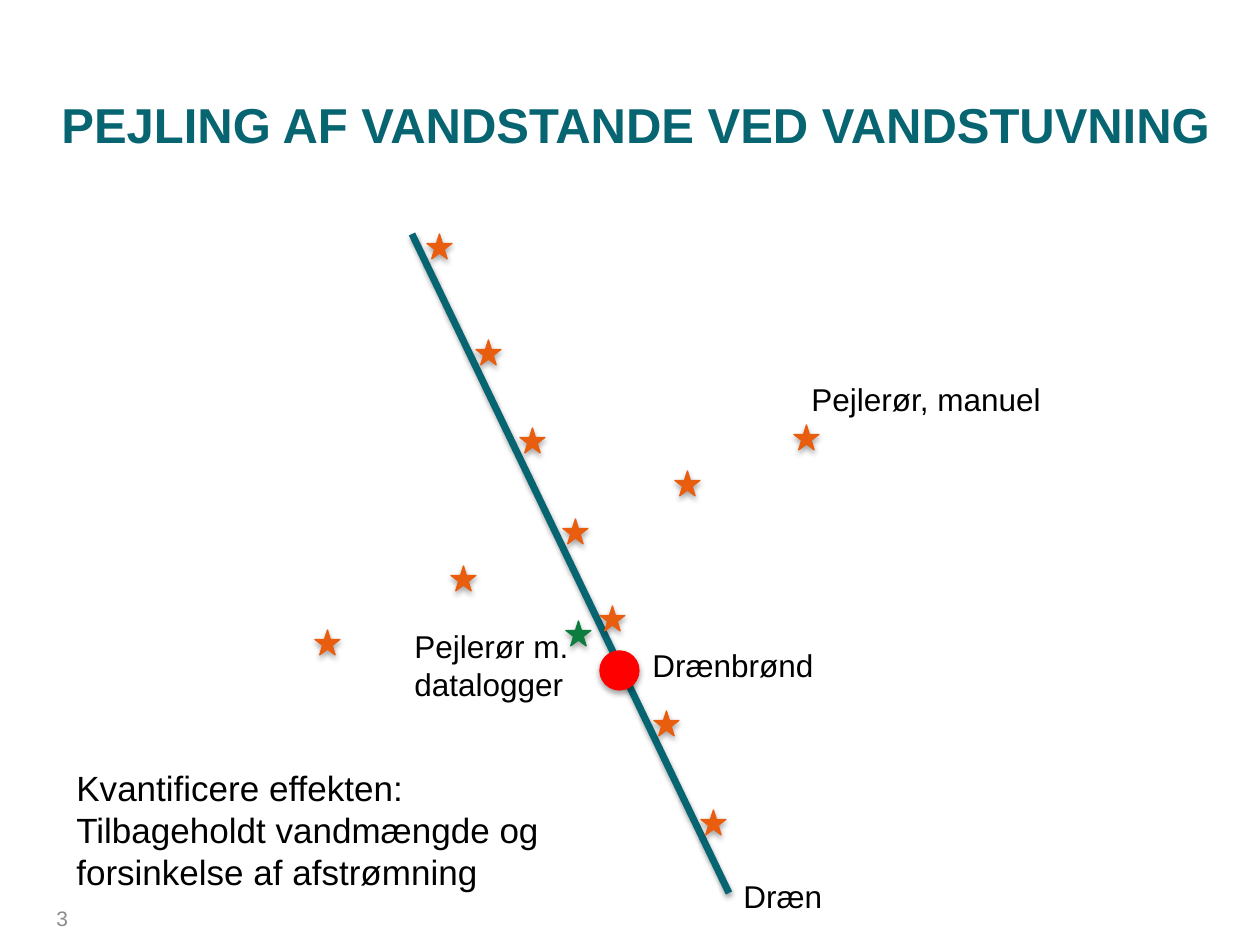
from lxml.etree import SubElement
from pptx import Presentation
from pptx.dml.color import RGBColor
from pptx.enum.shapes import MSO_CONNECTOR, MSO_SHAPE
from pptx.enum.text import MSO_ANCHOR, MSO_AUTO_SIZE, PP_ALIGN
from pptx.oxml.ns import qn
from pptx.util import Emu, Pt

TEAL = RGBColor(0x07, 0x64, 0x71)
ORANGE = RGBColor(0xE9, 0x5D, 0x0F)
GREEN = RGBColor(0x0D, 0x7C, 0x3F)
RED = RGBColor(0xFF, 0x00, 0x00)
BLACK = RGBColor(0x00, 0x00, 0x00)
GREY = RGBColor(0x8C, 0x8C, 0x8C)

TITLE = "PEJLING AF VANDSTANDE VED VANDSTUVNING"
DRAIN = (412, 234, 729, 893)
WELL = (600, 651, 39)
STAR_SIZE = 25
MANUAL_PIPES = [
    (476, 340), (427, 234), (520, 428), (600, 606), (563, 519), (315, 630),
    (451, 566), (675, 471), (794, 425), (654, 711), (701, 810),
]
LOGGER_PIPE = (566, 621)
LABELS = [
    ((731, 871, 105, 50), 18, ["Dræn"]),
    ((640, 640, 188, 50), 18, ["Drænbrønd"]),
    ((799, 374, 257, 50), 18, ["Pejlerør, manuel"]),
    ((402, 621, 181, 89), 18, ["Pejlerør m.\ndatalogger"]),
    ((64, 760, 491, 140), 20, [
        "Kvantificere effekten:",
        "Tilbageholdt vandmængde og\nforsinkelse af afstrømning",
    ]),
]
PAGE_NUMBER = ((0, 893, 98, 50), "3")


def px(length):
    return Emu(round(length * 914400 / 126))


def style_font(para, size, color, bold=False):
    font = para.font
    font.name = "Arial"
    font.size = Pt(size)
    font.bold = bold
    font.color.rgb = color


def add_shadow(shape, distance, opacity):
    effects = SubElement(shape._element.spPr, qn("a:effectLst"))
    shadow = SubElement(effects, qn("a:outerShdw"), blurRad="40000",
                        dist=str(distance), dir="5400000", rotWithShape="0")
    color = SubElement(shadow, qn("a:srgbClr"), val="000000")
    SubElement(color, qn("a:alpha"), val=str(opacity * 1000))


def add_marker(page, kind, left, top, size, color):
    marker = page.shapes.add_shape(kind, px(left), px(top), px(size), px(size))
    marker.fill.solid()
    marker.fill.fore_color.rgb = color
    marker.line.color.rgb = color
    marker.line.width = Pt(0.75)
    add_shadow(marker, 23000, 35)


def add_text(page, place, size, lines, color=BLACK):
    box = page.shapes.add_textbox(*map(px, place))
    frame = box.text_frame
    frame.word_wrap = False
    for index, line in enumerate(lines):
        para = frame.add_paragraph() if index else frame.paragraphs[0]
        para.text = line
        style_font(para, size, color)
    return frame


deck = Presentation()
deck.slide_width, deck.slide_height = px(1260), px(945)
page = deck.slides.add_slide(deck.slide_layouts[5])

title = page.shapes.title
title.left, title.top, title.width, title.height = map(px, (35, 45, 1201, 158))
title.text_frame.text = TITLE
title.text_frame.vertical_anchor = MSO_ANCHOR.MIDDLE
title_para = title.text_frame.paragraphs[0]
title_para.alignment = PP_ALIGN.CENTER
style_font(title_para, 28, TEAL, bold=True)

number_place, number = PAGE_NUMBER
number_frame = add_text(page, number_place, 12, [number], GREY)
number_frame.word_wrap = True
number_frame.vertical_anchor = MSO_ANCHOR.MIDDLE
number_frame.margin_right = px(30)
number_frame.paragraphs[0].alignment = PP_ALIGN.RIGHT

drain = page.shapes.add_connector(MSO_CONNECTOR.STRAIGHT, *map(px, DRAIN))
drain.line.color.rgb = TEAL
drain.line.width = Pt(4)
add_shadow(drain, 20000, 38)

add_marker(page, MSO_SHAPE.OVAL, *WELL, RED)
for left, top in MANUAL_PIPES:
    add_marker(page, MSO_SHAPE.STAR_5_POINT, left, top, STAR_SIZE, ORANGE)
add_marker(page, MSO_SHAPE.STAR_5_POINT, *LOGGER_PIPE, STAR_SIZE, GREEN)

for place, size, lines in LABELS:
    add_text(page, place, size, lines).auto_size = MSO_AUTO_SIZE.SHAPE_TO_FIT_TEXT

deck.save("out.pptx")
